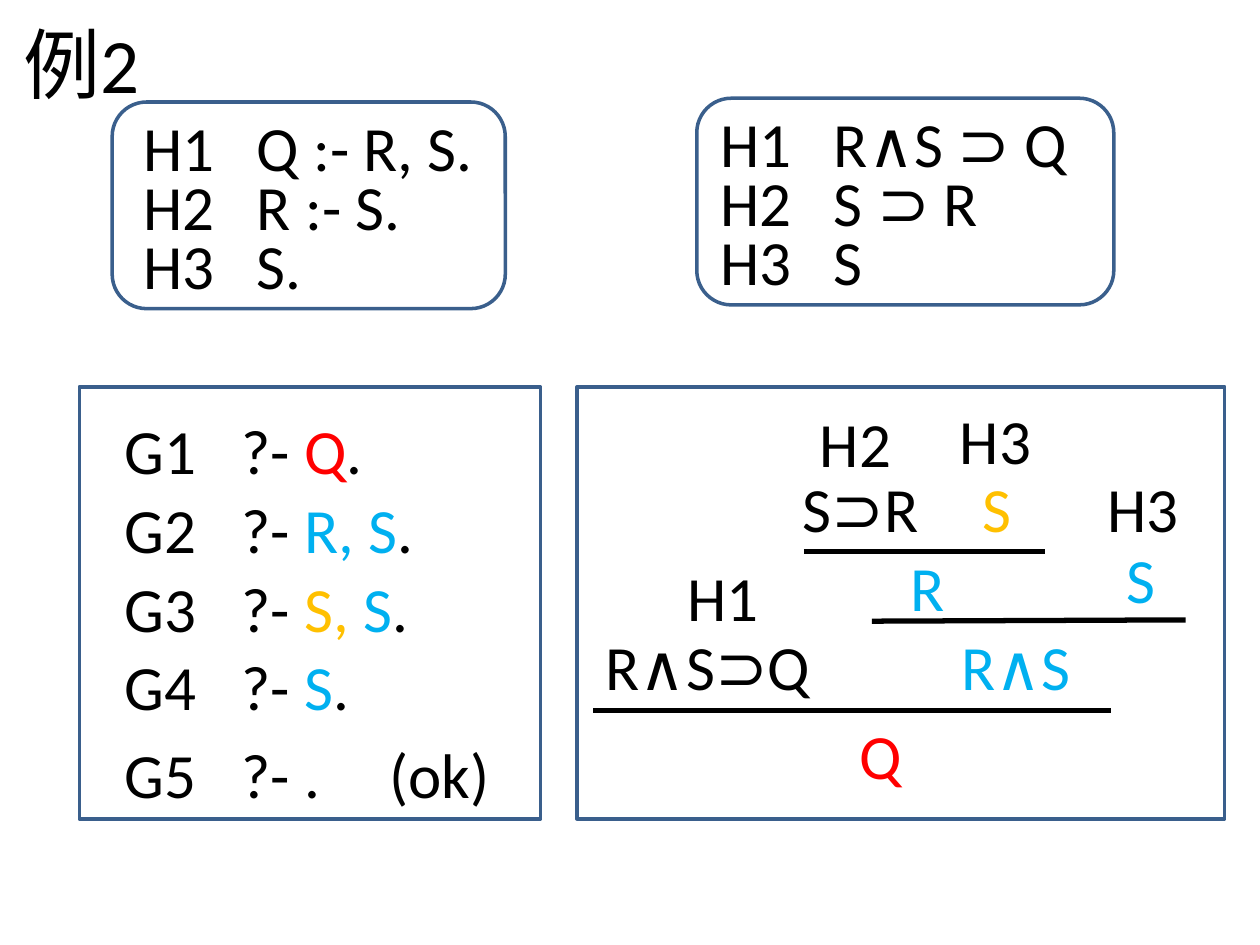
"""Build a slide that sets a logic program's goals beside its proof tree."""
from lxml import etree
from pptx import Presentation
from pptx.dml.color import RGBColor
from pptx.enum.shapes import MSO_CONNECTOR, MSO_SHAPE
from pptx.enum.text import MSO_ANCHOR, MSO_AUTO_SIZE, PP_ALIGN
from pptx.oxml.ns import qn
from pptx.util import Inches, Pt

STRAIGHT = MSO_CONNECTOR.STRAIGHT
RECTANGLE, ROUNDED = MSO_SHAPE.RECTANGLE, MSO_SHAPE.ROUNDED_RECTANGLE
FONT = "Calibri"
BLACK, RED, BLUE, GOLD, FRAME = "000000", "FF0000", "00B0F0", "FFC000", "3A5F8C"
color = RGBColor.from_string


def add_text(page, left, top, width, spans, tabs=()):
    """Add a one-line text box from (text, colour) spans with tab stops in inches."""
    box = page.shapes.add_textbox(Inches(left), Inches(top), Inches(width), Inches(0.71))
    box.text_frame.word_wrap = True
    box.text_frame.margin_right = 0
    para = box.text_frame.paragraphs[0]
    para.font.name = FONT
    para.font.size = Pt(36)
    for text, shade in spans:
        span = para.add_run()
        span.text = text
        span.font.color.rgb = color(shade)
    if tabs:
        properties = para._p.get_or_add_pPr()
        stops = etree.Element(qn("a:tabLst"))
        for stop in tabs:
            etree.SubElement(stops, qn("a:tab"), pos=str(Inches(stop)), algn="l")
        properties.insert(0, stops)


deck = Presentation()
deck.slide_width, deck.slide_height = Inches(10), Inches(7.5)
page = deck.slides.add_slide(deck.slide_layouts[5])

title = page.shapes.title
title.left, title.top, title.width, title.height = 0, 0, Inches(1.3), Inches(0.99)
title.text_frame.text = "例2"
title.text_frame.auto_size = MSO_AUTO_SIZE.NONE
title.text_frame.word_wrap = False
title.text_frame.vertical_anchor = MSO_ANCHOR.MIDDLE
heading = title.text_frame.paragraphs[0]
heading.alignment = PP_ALIGN.CENTER
heading.font.name = FONT
heading.font.size = Pt(44)
heading.font.color.rgb = color(BLACK)

frames = [
    (RECTANGLE, 0.63, 3.07, 3.66, 3.43),
    (RECTANGLE, 4.58, 3.07, 5.14, 3.43),
    (ROUNDED, 0.89, 0.81, 3.12, 1.64),
    (ROUNDED, 5.53, 0.78, 3.31, 1.64),
]
for kind, left, top, width, height in frames:
    frame = page.shapes.add_shape(kind, Inches(left), Inches(top), Inches(width), Inches(height))
    frame.shadow.inherit = False
    frame.fill.background()
    frame.line.color.rgb = color(FRAME)
    frame.line.width = Pt(2)

programs = [
    (1.04, 0.81, 2.84, ["Q :- R, S.", "R :- S.", "S."]),
    (5.62, 0.78, 3.2, ["R∧S ⊃ Q", "S ⊃ R", "S"]),
]
for left, top, width, clauses in programs:
    for row, clause in enumerate(clauses):
        add_text(page, left, top + 0.47 * row, width, [(f"H{row + 1}\t{clause}", BLACK)], [0.9])

goals = [
    (3.22, [("Q", RED), (".", BLACK)]),
    (3.84, [("R, S", BLUE), (".", BLACK)]),
    (4.47, [("S, ", GOLD), ("S", BLUE), (".", BLACK)]),
    (5.09, [("S", BLUE), (".", BLACK)]),
    (5.79, [(".\t(ok)", BLACK)]),
]
for number, (top, spans) in enumerate(goals, 1):
    add_text(page, 0.89, top, 3.12, [(f"G{number}\t?- ", BLACK)] + spans, [0.93, 2.1])

formulas = [
    ("H2", 6.41, 3.16, 0.77, BLACK),
    ("H3", 7.52, 3.14, 0.77, BLACK),
    ("S⊃R", 6.27, 3.68, 1.21, BLACK),
    ("S", 7.7, 3.68, 0.43, GOLD),
    ("H3", 8.69, 3.68, 0.77, BLACK),
    ("R", 7.13, 4.3, 0.48, BLUE),
    ("S", 8.84, 4.24, 0.43, BLUE),
    ("H1", 5.36, 4.38, 0.77, BLACK),
    ("R∧S⊃Q", 4.71, 4.93, 2.06, BLACK),
    ("R∧S", 7.53, 4.93, 1.21, BLUE),
    ("Q", 6.72, 5.64, 0.54, RED),
]
for text, left, top, width, shade in formulas:
    add_text(page, left, top, width, [(text, shade)])

inference_lines = [
    (6.38, 4.38, 8.29, 4.38),
    (6.92, 4.93, 9.41, 4.92),
    (4.71, 5.64, 8.82, 5.64),
]
for ends in inference_lines:
    rule = page.shapes.add_connector(STRAIGHT, *map(Inches, ends))
    rule.line.color.rgb = color(BLACK)
    rule.line.width = Pt(3)
    etree.SubElement(rule._element.spPr, qn("a:effectLst"))

deck.save("out.pptx")
